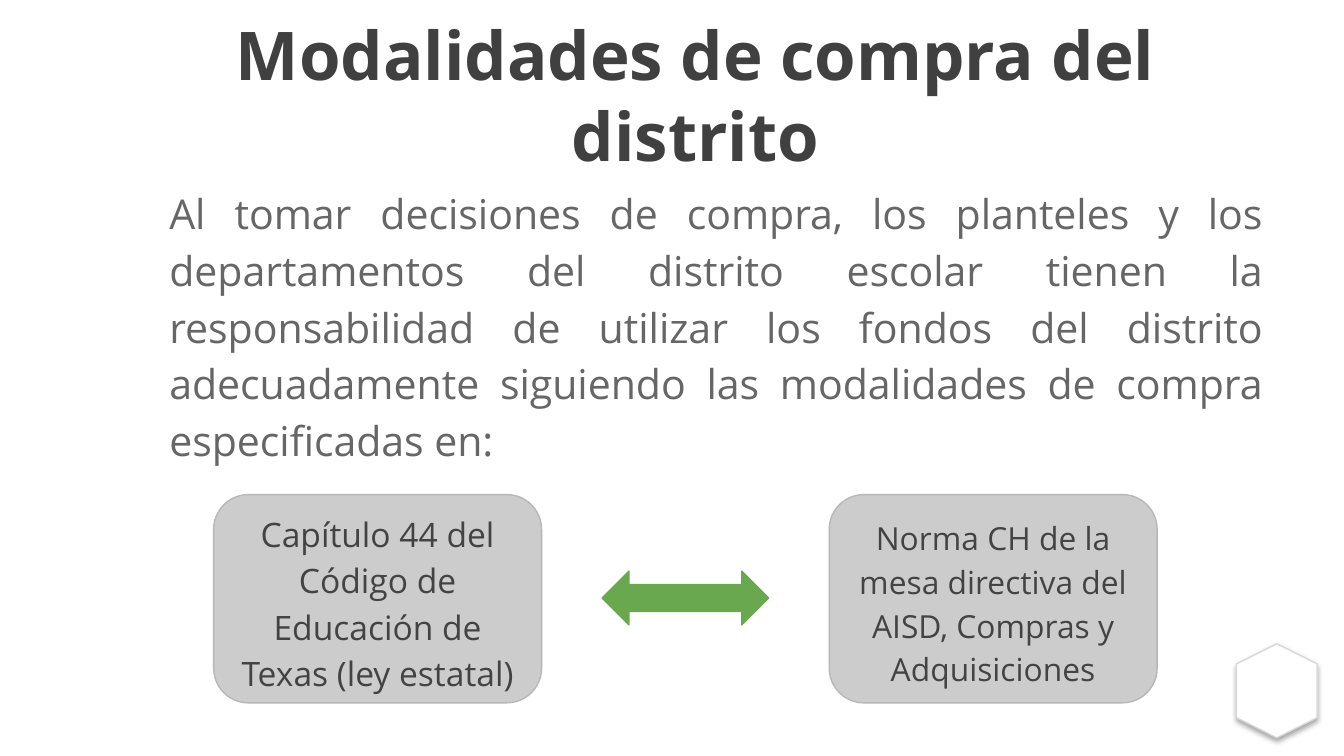
from lxml import etree
from pptx import Presentation
from pptx.dml.color import RGBColor
from pptx.enum import shapes, text
from pptx.oxml import ns
from pptx.util import Inches, Pt

COLORS = {
    "title": "404040", "body": "666666", "label": "434343",
    "box": "CCCCCC", "box_line": "B7B7B7", "arrow": "6AA84F",
    "badge": "FFFFFF", "badge_line": "D8D8D8", "shadow": "000000",
}


def add_figure(kind, left, top, width, height, fill, line):
    figure = slide.shapes.add_shape(
        kind, Inches(left), Inches(top), Inches(width), Inches(height))
    figure.shadow.inherit = False
    figure.fill.solid()
    figure.fill.fore_color.rgb = RGBColor.from_string(COLORS[fill])
    figure.line.color.rgb = RGBColor.from_string(COLORS[line])
    figure.line.width = Pt(0.75)
    return figure


def write(frame, wording, size, color, align, spacing=None, bold=False):
    frame.word_wrap = True
    frame.auto_size = text.MSO_AUTO_SIZE.NONE
    paragraph = frame.paragraphs[0]
    paragraph.alignment = align
    paragraph.line_spacing = spacing
    paragraph.space_before = Pt(0)
    run = paragraph.add_run()
    run.text = wording
    run.font.name = "Open Sans"
    run.font.size = Pt(size)
    run.font.bold = bold
    run.font.color.rgb = RGBColor.from_string(COLORS[color])
    return paragraph


# Widescreen slide, 16:9
presentation = Presentation()
presentation.slide_width = Inches(10)
presentation.slide_height = Inches(10 * 9 / 16)
slide = presentation.slides.add_slide(presentation.slide_layouts[1])

# Corner hexagon with a soft shadow
badge = add_figure(shapes.MSO_SHAPE.HEXAGON, 9.15, 4.84, 0.7, 0.6, "badge", "badge_line")
badge.rotation = 90
effects = badge._element.spPr.find(ns.qn("a:effectLst"))
shadow = etree.SubElement(effects, ns.qn("a:outerShdw"), blurRad=str(Pt(3.1)),
                          dist=str(Pt(1.8)), dir="5400000", rotWithShape="0")
tint = etree.SubElement(shadow, ns.qn("a:srgbClr"), val=COLORS["shadow"])
etree.SubElement(tint, ns.qn("a:alpha"), val="35000")

# Title
title = slide.shapes.title
title.left, title.top, title.width, title.height = map(Inches, (0.85, 0.23, 8.65, 0.94))
title.text_frame.vertical_anchor = text.MSO_ANCHOR.MIDDLE
write(title.text_frame, "Modalidades de compra del distrito", 36, "title",
      text.PP_ALIGN.CENTER, bold=True)

# Introduction
intro = slide.placeholders[1]
intro.left, intro.top, intro.width, intro.height = map(Inches, (0.85, 1.3, 8.65, 3.57))
intro_paragraph = write(
    intro.text_frame,
    "Al tomar decisiones de compra, los planteles y los departamentos del distrito "
    "escolar tienen la responsabilidad de utilizar los fondos del distrito "
    "adecuadamente siguiendo las modalidades de compra especificadas en:",
    22, "body", text.PP_ALIGN.JUSTIFY, 1.15)
properties = intro_paragraph._p.get_or_add_pPr()
properties.set("marL", str(Inches(0.31)))
properties.set("indent", "0")
etree.SubElement(properties, ns.qn("a:buNone"))

# The two rules
rules = [
    (1.59, 18, "Capítulo 44 del Código de Educación de Texas (ley estatal)"),
    (6.17, 17, "Norma CH de la mesa directiva del AISD, Compras y Adquisiciones"),
]
for left, size, wording in rules:
    rule = add_figure(shapes.MSO_SHAPE.ROUNDED_RECTANGLE, left, 3.68, 2.44, 1.55,
                      "box", "box_line")
    frame = rule.text_frame
    frame.margin_left = frame.margin_right = Inches(0.1)
    frame.margin_top, frame.margin_bottom = Inches(0.03), Inches(0)
    frame.vertical_anchor = text.MSO_ANCHOR.MIDDLE
    write(frame, wording, size, "label", text.PP_ALIGN.CENTER, 1.15)

# Arrow between the rules
add_figure(shapes.MSO_SHAPE.LEFT_RIGHT_ARROW, 4.48, 4.25, 1.24, 0.4, "arrow", "arrow")

presentation.save("out.pptx")
